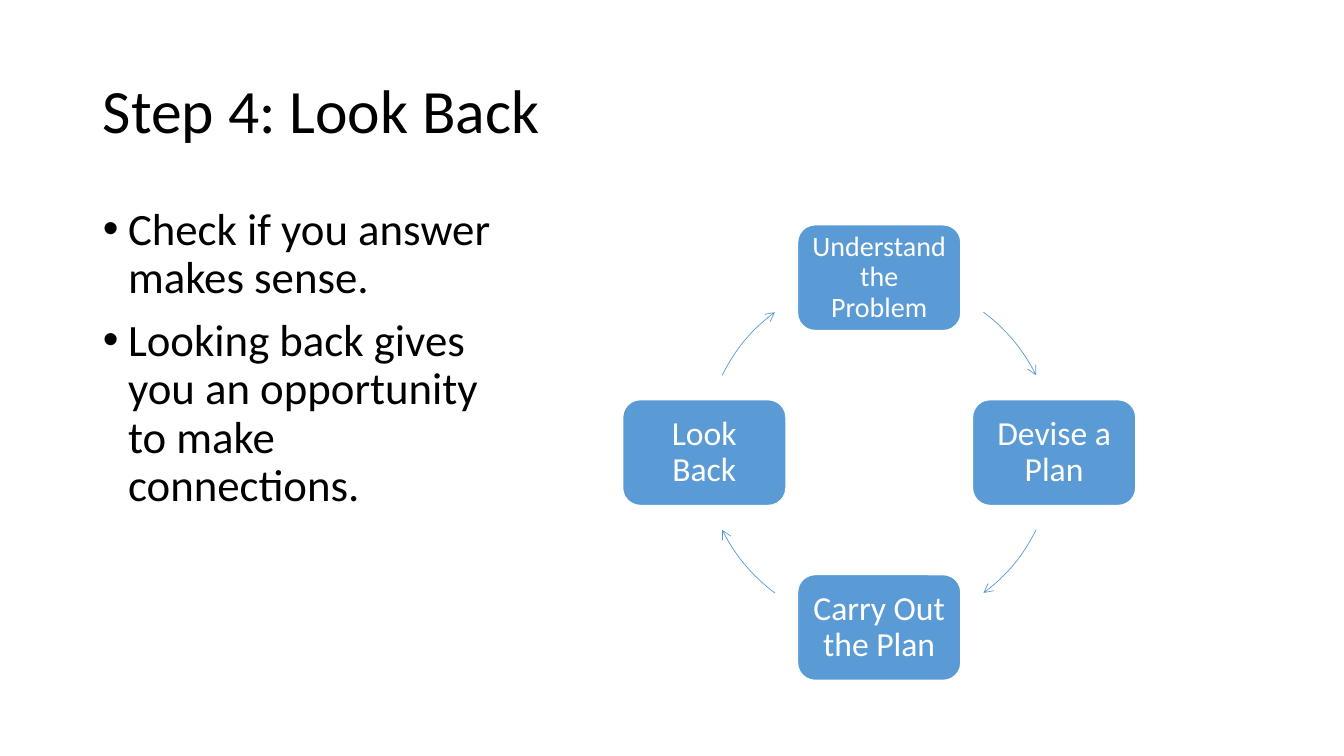
from math import cos, radians, sin

from lxml import etree
from pptx import Presentation
from pptx.dml.color import RGBColor
from pptx.enum.shapes import MSO_SHAPE
from pptx.enum.text import MSO_ANCHOR, MSO_AUTO_SIZE, PP_ALIGN
from pptx.oxml.ns import qn
from pptx.util import Inches, Pt

ROUNDED, ARC = MSO_SHAPE.ROUNDED_RECTANGLE, MSO_SHAPE.ARC
LEFT, CENTER = PP_ALIGN.LEFT, PP_ALIGN.CENTER
TOP, MIDDLE = MSO_ANCHOR.TOP, MSO_ANCHOR.MIDDLE
NO_AUTOFIT = MSO_AUTO_SIZE.NONE

FONT = "Calibri"
BLACK, WHITE, BLUE = "000000", "FFFFFF", "5B9BD5"
CYCLE_X, CYCLE_Y, RADIUS = 8.72, 4.49, 1.735
STEP_WIDTH, STEP_HEIGHT = 1.62, 1.05
# Angles run clockwise from three o'clock, as in the arc preset.
ARROW_SPANS = [(306.6, 333.8), (26.2, 53.4), (126.6, 153.8), (206.2, 233.4)]
# Label, font size, inner margin
STEPS = [
    ("Understand the Problem", 20, 0.08),
    ("Devise a Plan", 24, 0.1),
    ("Carry Out the Plan", 24, 0.1),
    ("Look Back", 24, 0.1),
]
REMINDERS = [
    "Check if you answer makes sense.",
    "Looking back gives you an opportunity to make connections.",
]


def rgb(value):
    return RGBColor.from_string(value)


def place(placeholder, left, top, width, height):
    bounds = {"left": left, "top": top, "width": width, "height": height}
    for side, inches in bounds.items():
        setattr(placeholder, side, Inches(inches))


def write(frame, lines, size, color, align, anchor, before=0):
    frame.word_wrap = True
    frame.auto_size = NO_AUTOFIT
    frame.vertical_anchor = anchor
    frame.text = "\n".join(lines)
    layout = {"alignment": align, "line_spacing": 0.9,
              "space_before": Pt(before), "space_after": Pt(0)}
    for paragraph in frame.paragraphs:
        for name, value in layout.items():
            setattr(paragraph, name, value)
        font = paragraph.runs[0].font
        font.name, font.size = FONT, Pt(size)
        font.color.rgb = rgb(color)


def add_bullets(frame):
    for paragraph in frame.paragraphs:
        properties = paragraph._p.get_or_add_pPr()
        properties.set("marL", str(Inches(0.25)))
        properties.set("indent", str(-Inches(0.25)))
        etree.SubElement(properties, qn("a:buFont"), typeface="Arial")
        etree.SubElement(properties, qn("a:buChar"), char="•")


def add_centered(slide, preset, x, y, width, height, line_color, line_width):
    """Add a preset shape around the point x, y."""
    shape = slide.shapes.add_shape(
        preset, Inches(x - width / 2), Inches(y - height / 2),
        Inches(width), Inches(height))
    shape.shadow.inherit = False
    shape.line.color.rgb = rgb(line_color)
    shape.line.width = Pt(line_width)
    return shape


def add_step(slide, angle, label, size, margin):
    x = CYCLE_X + RADIUS * cos(radians(angle))
    y = CYCLE_Y + RADIUS * sin(radians(angle))
    step = add_centered(slide, ROUNDED, x, y, STEP_WIDTH, STEP_HEIGHT, WHITE, 1)
    step.fill.solid()
    step.fill.fore_color.rgb = rgb(BLUE)
    write(step.text_frame, [label], size, WHITE, CENTER, MIDDLE)
    for side in ("left", "top", "right", "bottom"):
        setattr(step.text_frame, f"margin_{side}", Inches(margin))


def add_cycle_arrow(slide, span):
    arrow = add_centered(slide, ARC, CYCLE_X, CYCLE_Y,
                         2 * RADIUS, 2 * RADIUS, BLUE, 0.5)
    arrow.fill.background()
    for index, degrees in enumerate(span):
        arrow.adjustments[index] = degrees * 0.6  # 60000ths over 100000
    etree.SubElement(arrow.line._get_or_add_ln(), qn("a:tailEnd"), type="arrow")


def main():
    deck = Presentation()
    deck.slide_width, deck.slide_height = Inches(13.33), Inches(7.5)
    slide = deck.slides.add_slide(deck.slide_layouts[1])
    title, body = slide.placeholders

    place(title, 0.92, 0.4, 11.5, 1.45)
    write(title.text_frame, ["Step 4: Look Back"], 44, BLACK, LEFT, MIDDLE)
    place(body, 0.92, 2, 4.24, 4.44)
    write(body.text_frame, REMINDERS, 32, BLACK, LEFT, TOP, before=10)
    add_bullets(body.text_frame)

    for position, (step, span) in enumerate(zip(STEPS, ARROW_SPANS)):
        add_step(slide, position * 90 - 90, *step)
        add_cycle_arrow(slide, span)
    deck.save("out.pptx")


if __name__ == "__main__":
    main()
